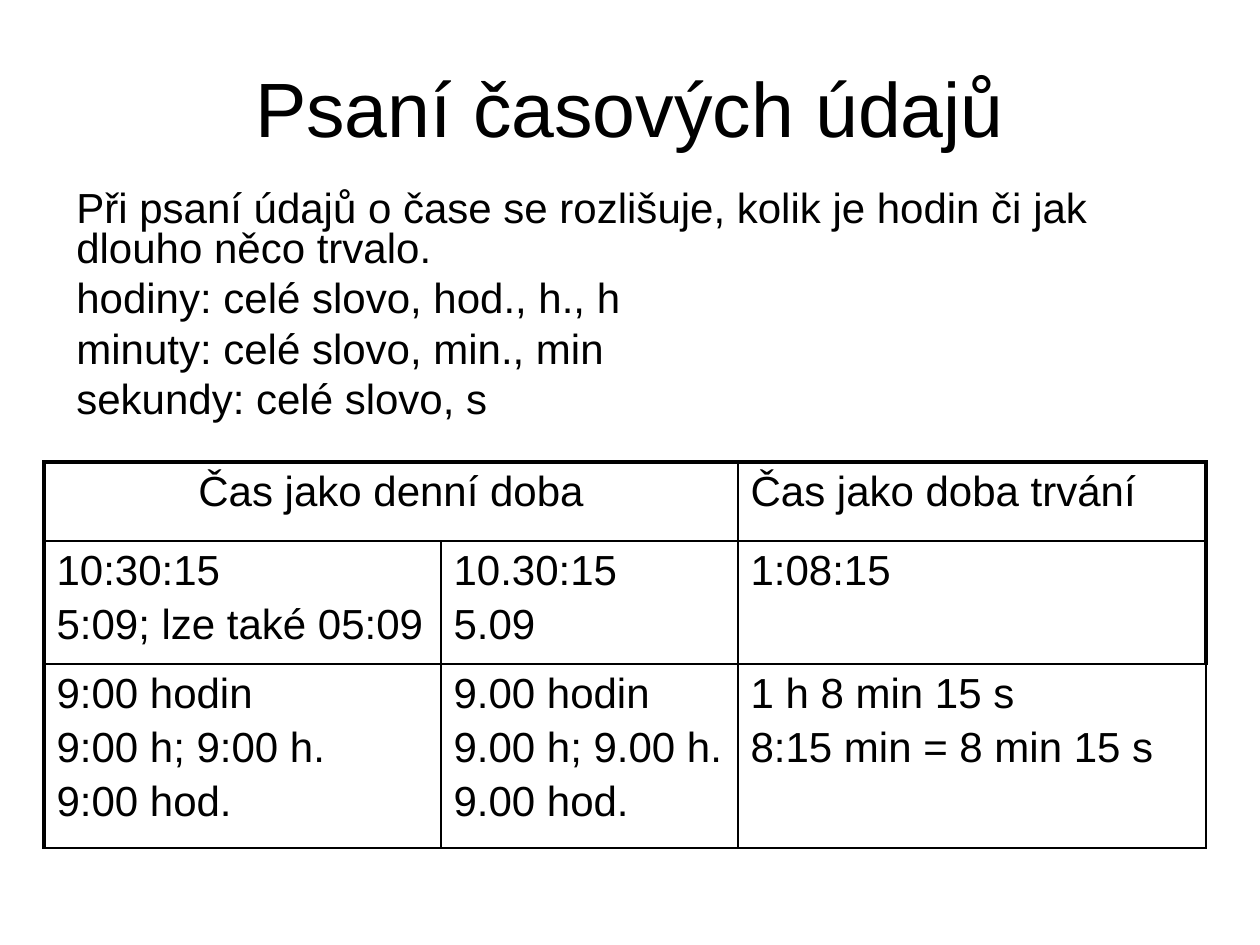
import pptx
import pptx.dml.color
import pptx.enum.text
import pptx.oxml
import pptx.oxml.ns
import pptx.util

EMU_PER_PX = 914400 / 126
BLACK = "000000"
THIN, THICK = 1, 2.25
CENTER = pptx.enum.text.PP_ALIGN.CENTER
LEFT = pptx.enum.text.PP_ALIGN.LEFT
TOP = pptx.enum.text.MSO_ANCHOR.TOP
MIDDLE = pptx.enum.text.MSO_ANCHOR.MIDDLE

BODY = [
    "Při psaní údajů o čase se rozlišuje, kolik je hodin či jak dlouho něco trvalo.",
    "hodiny: celé slovo, hod., h., h",
    "minuty: celé slovo, min., min",
    "sekundy: celé slovo, s",
]
COLUMN_WIDTHS = [397, 297, 468]
ROW_HEIGHTS = [79, 123, 184]
TIMES = [
    [["Čas jako denní doba"], [], ["Čas jako doba trvání"]],
    [["10:30:15", "5:09; lze také 05:09"], ["10.30:15", "5.09"], ["1:08:15"]],
    [
        ["9:00 hodin", "9:00 h; 9:00 h.", "9:00 hod."],
        ["9.00 hodin", "9.00 h; 9.00 h.", "9.00 hod."],
        ["1 h 8 min 15 s", "8:15 min = 8 min 15 s"],
    ],
]


def px(length):
    return pptx.util.Emu(round(length * EMU_PER_PX))


def color(value):
    return pptx.dml.color.RGBColor.from_string(value)


def write(frame, lines, size=24, align=LEFT, line_spacing=1.0, gap=0):
    """Write one paragraph per line, with gap points between them."""
    for index, line in enumerate(lines):
        paragraph = frame.add_paragraph() if index else frame.paragraphs[0]
        paragraph.text = line
        paragraph.alignment = align
        paragraph.line_spacing = line_spacing
        paragraph.space_before = pptx.util.Pt(gap if index else 0)
        paragraph.font.name = "Arial"
        paragraph.font.size = pptx.util.Pt(size)
        paragraph.font.color.rgb = color(BLACK)


def add_text(slide, left, top, width, height, lines, anchor=TOP, **text_format):
    box = slide.shapes.add_textbox(px(left), px(top), px(width), px(height))
    box.text_frame.word_wrap = True
    box.text_frame.vertical_anchor = anchor
    write(box.text_frame, lines, **text_format)


def set_borders(cell, widths):
    """Draw the left, right, top and bottom borders, in that order."""
    properties = cell._tc.get_or_add_tcPr()
    for index, (side, width) in enumerate(zip("LRTB", widths)):
        line = pptx.oxml.parse_xml(
            f'<a:ln{side} {pptx.oxml.ns.nsdecls("a")} w="{pptx.util.Pt(width)}">'
            f'<a:solidFill><a:srgbClr val="{BLACK}"/></a:solidFill></a:ln{side}>'
        )
        properties.insert(index, line)


def add_time_table(slide, left, top):
    rows, columns = len(ROW_HEIGHTS), len(COLUMN_WIDTHS)
    table = slide.shapes.add_table(
        rows, columns, px(left), px(top), px(sum(COLUMN_WIDTHS)), px(sum(ROW_HEIGHTS))
    ).table
    table.first_row = table.horz_banding = False
    for column, width in zip(table.columns, COLUMN_WIDTHS):
        column.width = px(width)
    for row, height in zip(table.rows, ROW_HEIGHTS):
        row.height = px(height)
    table.cell(0, 0).merge(table.cell(0, 1))
    for r, row in enumerate(TIMES):
        for c, lines in enumerate(row):
            cell = table.cell(r, c)
            cell.fill.background()
            write(cell.text_frame, lines, gap=4.3,
                  align=CENTER if cell.is_merge_origin else LEFT)
            thick_right = c == columns - 1 and r < rows - 1
            set_borders(cell, [
                THIN if c else THICK,
                THICK if thick_right else THIN,
                THIN if r else THICK,
                THIN,
            ])


def main():
    presentation = pptx.Presentation()
    presentation.slide_width, presentation.slide_height = px(1260), px(945)
    slide = presentation.slides.add_slide(presentation.slide_layouts[6])
    add_text(slide, 63, 38, 1134, 137, ["Psaní časových údajů"],
             anchor=MIDDLE, size=44, align=CENTER)
    add_text(slide, 64, 185, 1121, 277, BODY, line_spacing=0.8, gap=5.6)
    add_time_table(slide, 44, 462)
    presentation.save("out.pptx")


if __name__ == "__main__":
    main()
